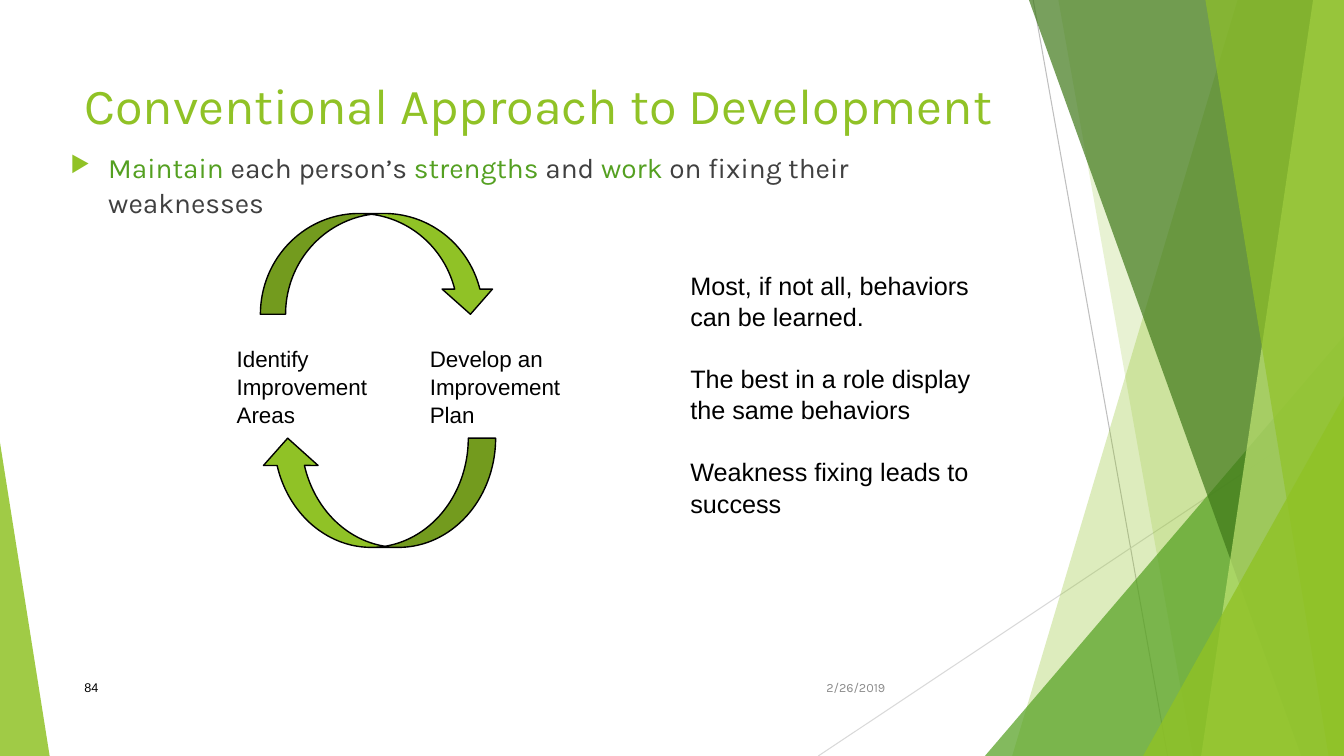
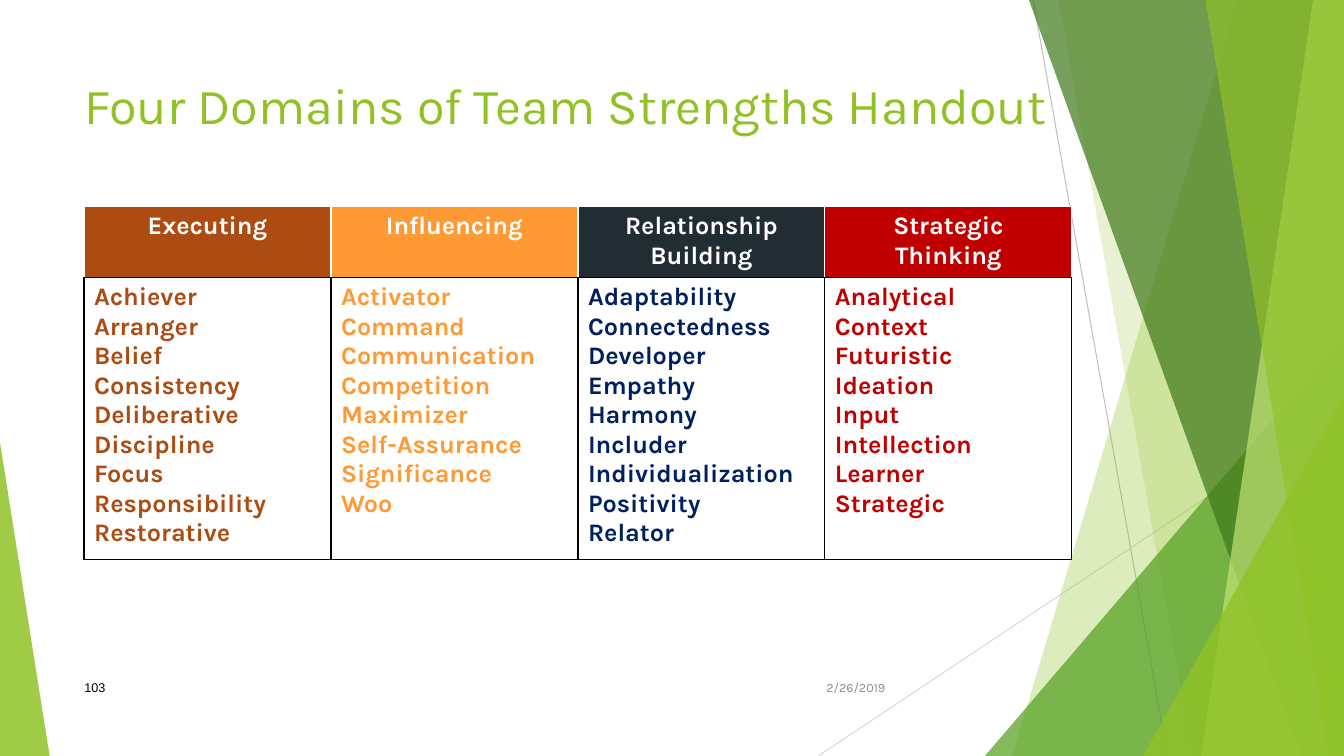
from pptx import Presentation
from pptx.dml.color import RGBColor
from pptx.enum.shapes import MSO_CONNECTOR as CONN, MSO_SHAPE as SHAPE
from pptx.enum.text import MSO_ANCHOR as ANCHOR, PP_ALIGN as ALIGN
from pptx.oxml import parse_xml
from pptx.oxml.ns import nsdecls, qn
from pptx.util import Pt
from lxml.etree import SubElement


class Theme:
    lime, green, forest, pale = "90C226", "54A021", "3F7819", "C0E474"
    black, white, body, muted = "000000", "FFFFFF", "404040", "8C8C8C"
    rule_dark, rule_light = "BFBFBF", "D9D9D9"
    rust, orange, slate, navy, red = "AD4C12", "FF9933", "212D32", "002060", "C00000"
    heading_font, plain_font = "Karla", "Arial"
    title, lead, text, label, footer = 36, 20, 18, 16, 9
    leading = 1.04


def paint(shape, color, alpha=100, outline=None):
    """Fill a shape, with opacity in percent and an optional 1 pt outline."""
    shape.shadow.inherit = False
    shape.fill.solid()
    shape.fill.fore_color.rgb = RGBColor.from_string(color)
    if alpha < 100:
        clr = shape.fill._xPr.find(qn("a:solidFill"))[0]
        SubElement(clr, qn("a:alpha")).set("val", str(alpha * 1000))
    if outline:
        shape.line.color.rgb = RGBColor.from_string(outline)
        shape.line.width = Pt(1)
    else:
        shape.line.fill.background()


def write(tf, paragraphs, size, font, align=ALIGN.LEFT, bold=False, leading=Theme.leading, gap=0):
    """Write paragraphs, each a list of (text, color) runs."""
    tf.word_wrap = True
    for i, runs in enumerate(paragraphs):
        p = tf.add_paragraph() if i else tf.paragraphs[0]
        p.alignment, p.line_spacing = align, leading
        p.space_before = Pt(gap if i else 0)
        for text, color in runs:
            r = p.add_run()
            r.text = text
            r.font.size, r.font.name, r.font.bold = Pt(size), font, bold
            r.font.color.rgb = RGBColor.from_string(color)


W, H = 960, 540
prs = Presentation()
prs.slide_width, prs.slide_height = Pt(W), Pt(H)

# Backdrop: rules (x1, y1, x2, y2) and shards, from back to front
RULES = [(738, 0, 834, H, Theme.rule_dark), (W, 290, 584.5, H, Theme.rule_light)]
# A band runs from its left edge (top x, bottom x) to the right side of the slide;
# a triangle is given by left, top, width and the place of its apex.
SHARDS = [
    ("band", (884, 723), Theme.lime, 30),
    ("band", (756, 852), Theme.lime, 20),
    ("triangle", (703.5, 240, 256.5, 1), Theme.green, 72),
    ("band", (735, 929.5), Theme.forest, 70),
    ("band", (938, 858), Theme.pale, 70),
    ("band", (861, 949), Theme.lime, 65),
    ("triangle", (816.5, 283, 143.5, 1), Theme.lime, 80),
    ("triangle", (0, 316, 35.5, 0), Theme.lime, 85),
]
PAGES = [
    ("Conventional Approach to Development", "84"),
    ("Four Domains of Team Strengths Handout", "103"),
]

for title, number in PAGES:
    s = prs.slides.add_slide(prs.slide_layouts[6])
    for x1, y1, x2, y2, color in RULES:
        rule = s.shapes.add_connector(CONN.STRAIGHT, Pt(x1), Pt(y1), Pt(x2), Pt(y2))
        rule.line.color.rgb = RGBColor.from_string(color)
        rule.line.width = Pt(0.75)
        SubElement(rule._element.spPr, qn("a:effectLst"))
    for kind, place, color, alpha in SHARDS:
        if kind == "band":
            top_x, bottom_x = place
            outline = s.shapes.build_freeform(Pt(top_x), Pt(0))
            outline.add_line_segments([(Pt(W), Pt(0)), (Pt(W), Pt(H)), (Pt(bottom_x), Pt(H))])
            sp = outline.convert_to_shape()
        else:
            x, y, w, apex = place
            sp = s.shapes.add_shape(SHAPE.ISOSCELES_TRIANGLE, Pt(x), Pt(y), Pt(w), Pt(H - y))
            sp.adjustments[0] = apex
        paint(sp, color, alpha)
    sp = s.shapes.add_textbox(Pt(53.3), Pt(48), Pt(712), Pt(104))
    write(sp.text_frame, [[(title, Theme.lime)]], Theme.title, Theme.heading_font)
    for text, x, w, font, color, align in [
        ("2/26/2019", 567.4, 72, Theme.heading_font, Theme.muted, ALIGN.RIGHT),
        (number, 53.3, 496, Theme.plain_font, Theme.black, ALIGN.LEFT),
    ]:
        sp = s.shapes.add_textbox(Pt(x), Pt(476), Pt(w), Pt(29))
        sp.text_frame.vertical_anchor = ANCHOR.MIDDLE
        write(sp.text_frame, [[(text, color)]], Theme.footer, font, align)

cycle_slide, domains_slide = prs.slides

# Slide 1: lead sentence, improvement cycle and beliefs
s = cycle_slide
sp = s.shapes.add_textbox(Pt(43.2), Pt(103), Pt(677), Pt(324))
lead = [
    ("Maintain", Theme.green), (" each person’s ", Theme.body), ("strengths ", Theme.green),
    ("and ", Theme.body), ("work", Theme.green), (" on fixing their weaknesses", Theme.body),
]
write(sp.text_frame, [lead], Theme.lead, Theme.heading_font)
pPr = sp.text_frame.paragraphs[0]._p.get_or_add_pPr()
pPr.set("marL", str(Pt(27)))
pPr.set("indent", str(-Pt(27)))
for bullet in (
    f'<a:buClr {nsdecls("a")}><a:srgbClr val="{Theme.lime}"/></a:buClr>',
    f'<a:buSzPct {nsdecls("a")} val="80000"/>',
    f'<a:buChar {nsdecls("a")} char="▶"/>',
):
    pPr.append(parse_xml(bullet))

for shape, y, h in [(SHAPE.CURVED_DOWN_ARROW, 152.5, 72), (SHAPE.CURVED_UP_ARROW, 313, 78)]:
    sp = s.shapes.add_shape(shape, Pt(186), Pt(y), Pt(168), Pt(h))
    paint(sp, Theme.lime, outline=Theme.black)
    if shape == SHAPE.CURVED_UP_ARROW:
        sp._element.spPr.find(qn("a:xfrm")).set("flipH", "1")

beliefs = [
    "Most, if not all, behaviors can be learned.",
    "The best in a role display the same behaviors",
    "Weakness fixing leads to success",
]
for texts, x, y, w, h, size in [
    (["Identify Improvement Areas"], 162, 242.3, 108, 65.5, Theme.label),
    (["Develop an Improvement Plan"], 300, 242.3, 108, 65.5, Theme.label),
    (beliefs, 486, 188.6, 234, 204, Theme.text),
]:
    sp = s.shapes.add_textbox(Pt(x), Pt(y), Pt(w), Pt(h))
    write(sp.text_frame, [[(text, Theme.black)] for text in texts], size, Theme.plain_font, gap=21.6)

# Slide 2: table of domains (heading, fill, text color, strengths)
s = domains_slide
DOMAINS = [
    (["Executing"], Theme.rust, Theme.rust,
     ["Achiever", "Arranger", "Belief", "Consistency", "Deliberative", "Discipline",
      "Focus", "Responsibility", "Restorative"]),
    (["Influencing"], Theme.orange, Theme.orange,
     ["Activator", "Command", "Communication", "Competition", "Maximizer",
      "Self-Assurance", "Significance", "Woo"]),
    (["Relationship Building"], Theme.slate, Theme.navy,
     ["Adaptability", "Connectedness", "Developer", "Empathy", "Harmony", "Includer",
      "Individualization", "Positivity", "Relator"]),
    (["Strategic", "Thinking"], Theme.red, Theme.red,
     ["Analytical", "Context", "Futuristic", "Ideation", "Input", "Intellection",
      "Learner", "Strategic"]),
]
column_width, row_heights = 176.4, (49.2, 197)
table = s.shapes.add_table(2, len(DOMAINS), Pt(60), Pt(147.6),
                           Pt(column_width * len(DOMAINS)), Pt(sum(row_heights))).table
table.horz_banding = False
for row, height in zip(table.rows, row_heights):
    row.height = Pt(height)

for col, (heading, fill, color, strengths) in enumerate(DOMAINS):
    table.columns[col].width = Pt(column_width)
    head, body = table.cell(0, col), table.cell(1, col)
    for cell, lines, ink, align, edge in [
        (head, heading, Theme.white, ALIGN.CENTER, Theme.white),
        (body, strengths, color, ALIGN.LEFT, Theme.black),
    ]:
        write(cell.text_frame, [[(line, ink)] for line in lines], Theme.text,
              Theme.heading_font, align, bold=True, leading=1.0)
        tcPr = cell._tc.get_or_add_tcPr()
        for side in ("lnL", "lnR", "lnT", "lnB"):
            side_color = Theme.black if side == "lnB" else edge
            tcPr.append(parse_xml(
                f'<a:{side} {nsdecls("a")} w="{Pt(1)}"><a:solidFill>'
                f'<a:srgbClr val="{side_color}"/></a:solidFill></a:{side}>'))
    head.fill.solid()
    head.fill.fore_color.rgb = RGBColor.from_string(fill)
    body.fill.background()

prs.save("out.pptx")
